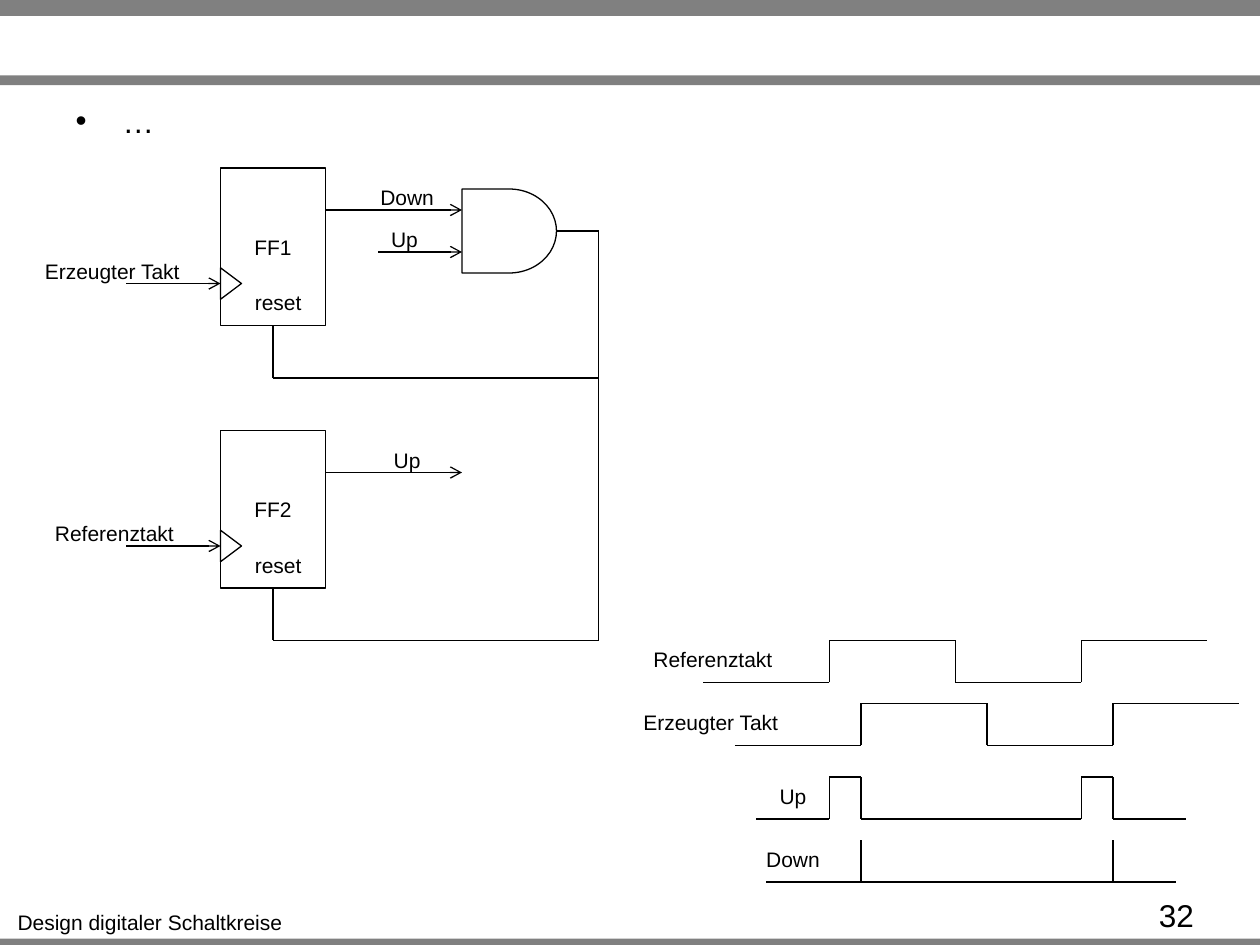
from lxml.etree import SubElement
from pptx import Presentation
from pptx.dml.color import RGBColor
from pptx.enum.shapes import MSO_CONNECTOR, MSO_SHAPE
from pptx.enum.text import MSO_ANCHOR, PP_ALIGN
from pptx.oxml.ns import qn
from pptx.util import Cm, Pt

BLACK = RGBColor(0, 0, 0)
GRAY = RGBColor(0x80, 0x80, 0x80)
FONT = {"name": "Arial", "size": Pt(12), "bold": False}
LARGE = {**FONT, "size": Pt(18)}
WIDTHS = {"Erzeugter Takt": 15.4, "Referenztakt": 13.8, "Down": 7.56, "Up": 5.04, "reset": 7}


def grid(n):
    """Convert steps of the drawing grid, 12 to the inch, to a length."""
    return Cm(n * 2.54 / 12)


def set_attrs(obj, values):
    """Set every attribute named in a dict."""
    for name, value in values.items():
        setattr(obj, name, value)


def write(tf, text, font=FONT, align=PP_ALIGN.CENTER):
    """Write one formatted paragraph into a text frame."""
    p = tf.paragraphs[0]
    set_attrs(p, {"alignment": align, "space_before": Pt(0)})
    r = p.add_run()
    r.text = text
    set_attrs(r.font, font)
    r.font.color.rgb = BLACK
    return p


def add_text(s, text, x, y, w, h, font=FONT, align=PP_ALIGN.CENTER):
    """Add a text box on one line."""
    tf = s.shapes.add_textbox(x, y, w, h).text_frame
    tf.word_wrap = False
    write(tf, text, font, align)


def add_label(s, text, x, y):
    """Add a signal label at a grid position."""
    add_text(s, text, grid(x), grid(y), grid(WIDTHS[text]), Cm(0.76))


def add_bar(s, y, h):
    """Add a gray bar across the slide."""
    sp = s.shapes.add_shape(MSO_SHAPE.RECTANGLE, 0, Cm(y), Cm(25.4), Cm(h))
    sp.shadow.inherit = False
    sp.fill.solid()
    sp.fill.fore_color.rgb = GRAY
    sp.line.fill.background()


def add_outline(s, kind, x, y, w, h):
    """Add an unfilled preset shape at a grid position."""
    sp = s.shapes.add_shape(kind, *map(grid, (x, y, w, h)))
    sp.shadow.inherit = False
    sp.fill.background()
    sp.line.color.rgb = BLACK
    sp.line.width = Pt(0.75)
    return sp


def add_path(s, *points, arrow=False):
    """Join grid points with straight connectors."""
    for start, end in zip(points, points[1:]):
        c = s.shapes.add_connector(MSO_CONNECTOR.STRAIGHT, *map(grid, start + end))
        c.line.color.rgb = BLACK
        c.line.width = Pt(0.75)
        if arrow:
            SubElement(c.line._get_or_add_ln(), qn("a:tailEnd"), type="arrow")
        SubElement(c._element.spPr, qn("a:effectLst"))


def add_flip_flop(s, name, y, clock, clock_x, output, output_x):
    """Add a flip-flop with its clock, output and reset wiring."""
    sp = add_outline(s, MSO_SHAPE.RECTANGLE, 21, y, 10, 15)
    sp.text_frame.vertical_anchor = MSO_ANCHOR.MIDDLE
    write(sp.text_frame, name)
    add_outline(s, MSO_SHAPE.ISOSCELES_TRIANGLE, 20.5, y + 10, 3, 2).rotation = 90
    add_path(s, (12, y + 11), (21, y + 11), arrow=True)
    add_path(s, (31, y + 4), (44, y + 4), arrow=True)
    add_path(s, (26, y + 15), (26, y + 20), (57, y + 20))
    add_label(s, clock, clock_x, y + 8)
    add_label(s, output, output_x, y + 1)
    add_label(s, "reset", 23, y + 11)


def add_wave(s, name, label_x, base, start, edges, end):
    """Add a labelled signal that toggles at each edge."""
    points, level = [(start, base)], base
    for x in edges:
        points.append((x, level))
        level = 2 * base - 4 - level
        points.append((x, level))
    add_path(s, *points, (end, level))
    add_label(s, name, label_x, base - 4)


def add_body(s):
    """Format the body placeholder and drop the empty title."""
    title, body = s.placeholders
    title._element.getparent().remove(title._element)
    set_attrs(body, {"left": Cm(1.27), "top": Cm(1.93), "width": Cm(22.86), "height": Cm(2.51)})
    p = write(body.text_frame, "…", LARGE, PP_ALIGN.LEFT)
    pPr = p._p.get_or_add_pPr()
    pPr.set("marL", str(Cm(0.95)))
    pPr.set("indent", str(Cm(-0.95)))
    SubElement(pPr, qn("a:buFont"), typeface="Arial")
    SubElement(pPr, qn("a:buChar"), char="•")


def main():
    """Build the phase detector slide."""
    prs = Presentation()
    set_attrs(prs, {"slide_width": Cm(25.4), "slide_height": Cm(19.05)})
    s = prs.slides.add_slide(prs.slide_layouts[1])
    for y, h in ((18.92, 0.2), (0, 0.32), (1.52, 0.2)):
        add_bar(s, y, h)
    add_text(s, "Design digitaler Schaltkreise", Cm(0.08), Cm(18.21), Cm(5.89), Cm(0.76))
    add_body(s)

    add_flip_flop(s, "FF1", 16, "Erzeugter Takt", 3, "Down", 35)
    add_flip_flop(s, "FF2", 41, "Referenztakt", 4, "Up", 36.25)
    add_outline(s, MSO_SHAPE.FLOWCHART_DELAY, 44, 18, 9, 8)
    add_path(s, (53, 22), (57, 22), (57, 61))
    add_path(s, (36, 24), (44, 24), arrow=True)
    add_label(s, "Up", 36, 21)

    add_wave(s, "Referenztakt", 61, 65, 67, (79, 91, 103), 115)
    add_wave(s, "Erzeugter Takt", 60, 71, 70, (82, 94, 106), 118)
    add_wave(s, "Up", 73, 78, 72, (79, 82, 103, 106), 113)
    add_wave(s, "Down", 71.75, 84, 73, (), 112)
    for x in (82, 106):
        add_path(s, (x, 84), (x, 80))
    add_text(s, "32", Cm(23.11), Cm(17.93), Cm(2.21), Cm(0.61), LARGE, PP_ALIGN.LEFT)
    prs.save("out.pptx")


if __name__ == "__main__":
    main()
